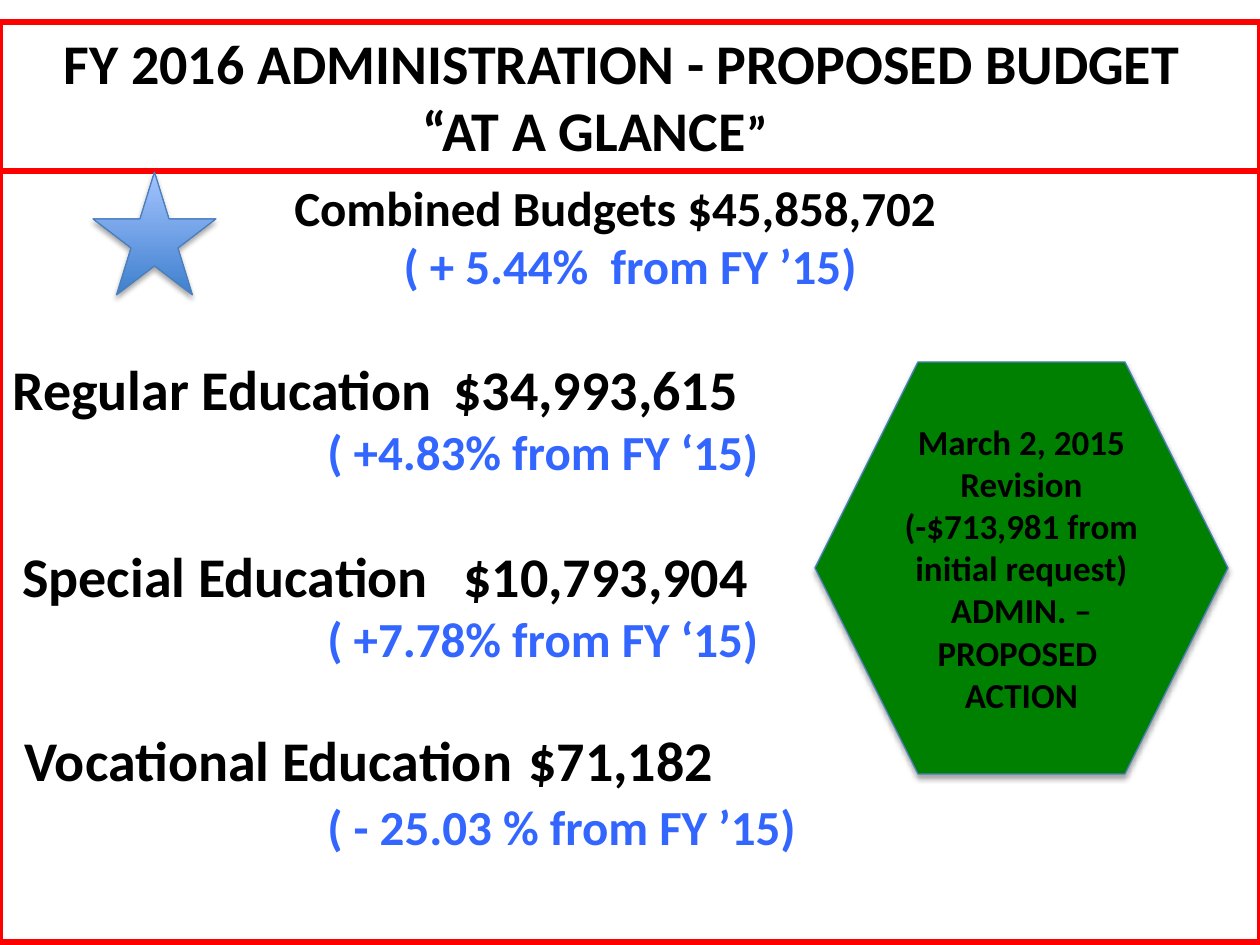
from lxml import etree
from pptx import Presentation
from pptx.dml.color import RGBColor
from pptx.enum.shapes import MSO_SHAPE
from pptx.enum.text import MSO_ANCHOR, PP_ALIGN
from pptx.oxml import parse_xml
from pptx.oxml.ns import qn
from pptx.util import Pt

PX = 914400 // 126
DRAWING_NS = "http://schemas.openxmlformats.org/drawingml/2006/main"
COLORS = {
    "text": "000000", "change": "3366FF", "frame": "FF0000", "revision": "008000",
    "edge": "4B7EBC", "star_dark": "3F80CE", "star_light": "A4C4FF",
}


def color(name):
    return RGBColor.from_string(COLORS[name])


def add_outlined(slide, preset, box, line, width):
    left, top, box_width, box_height = (length * PX for length in box)
    shape = slide.shapes.add_shape(preset, left, top, box_width, box_height)
    shape.shadow.inherit = False
    shape.fill.background()
    shape.line.color.rgb = color(line)
    shape.line.width = Pt(width)
    shape.text_frame.word_wrap = True
    shape.text_frame.vertical_anchor = MSO_ANCHOR.TOP
    return shape


def add_soft_shadow(shape):
    effects = shape._element.spPr.find(qn("a:effectLst"))
    effects.append(parse_xml(
        f'<a:outerShdw xmlns:a="{DRAWING_NS}" blurRad="{Pt(3.1)}" dist="{Pt(1.8)}" '
        'dir="5400000" rotWithShape="0"><a:srgbClr val="000000">'
        '<a:alpha val="35000"/></a:srgbClr></a:outerShdw>'))


def add_line(frame, runs, align=PP_ALIGN.CENTER, before=0, left=0, right=0, tab=None):
    """Add a paragraph of (text, size, colour) runs; left, right and tab are px."""
    is_first = not frame.paragraphs[0].runs
    paragraph = frame.paragraphs[0] if is_first else frame.add_paragraph()
    paragraph.alignment = align
    paragraph.space_before = Pt(before)
    properties = paragraph._p.get_or_add_pPr()
    properties.set("marL", str(left * PX))
    properties.set("marR", str(right * PX))
    properties.set("indent", "0")
    if tab:
        tabs = etree.SubElement(properties, qn("a:tabLst"))
        etree.SubElement(tabs, qn("a:tab"), pos=str(tab * PX), algn="l")
    for text, size, name in runs:
        run = paragraph.add_run()
        run.text = text
        run.font.name = "Calibri"
        run.font.size = Pt(size)
        run.font.bold = True
        run.font.color.rgb = color(name)


def add_budgets(slide, box):
    frame = add_outlined(slide, MSO_SHAPE.RECTANGLE, box, "frame", 3).text_frame
    add_line(frame, [("Combined Budgets $45,858,702", 28, "text")], right=30)
    add_line(frame, [("( + 5.44%  from FY ’15)", 28, "change")])
    # name, amount, change, left px, amount px, space before name and change
    programs = [
        ("Regular Education", "$34,993,615", "( +4.83% from FY ‘15)", 0, 492, 34, 0),
        ("Special Education", "$10,793,904", "( +7.78% from FY ‘15)", 10, 492, 35, 0),
        ("Vocational Education", "$71,182", "( - 25.03 % from FY ’15)", 12, 542, 33, 2),
    ]
    for name, amount, change, left, tab, before_name, before_change in programs:
        add_line(frame, [(f"{name}\t{amount}", 32, "text")], PP_ALIGN.LEFT,
                 before_name, left, tab=tab)
        add_line(frame, [(change, 28, "change")], PP_ALIGN.LEFT, before_change, left=315)


def add_title(slide, box):
    frame = add_outlined(slide, MSO_SHAPE.RECTANGLE, box, "frame", 3).text_frame
    add_line(frame, [("FY 2016 ADMINISTRATION - PROPOSED BUDGET", 32, "text")], right=16)
    add_line(frame, [("“AT A GLANCE", 32, "text"), ("”", 28, "text")], right=70)


def add_revision(slide, box):
    hexagon = add_outlined(slide, MSO_SHAPE.HEXAGON, box, "edge", 0.75)
    hexagon.fill.solid()
    hexagon.fill.fore_color.rgb = color("revision")
    add_soft_shadow(hexagon)
    hexagon.text_frame.vertical_anchor = MSO_ANCHOR.MIDDLE
    for text in ("March 2, 2015", "Revision", "(-$713,981 from initial request)",
                 "ADMIN. –PROPOSED ", "ACTION"):
        add_line(hexagon.text_frame, [(text, 20, "text")])


def add_star(slide, box):
    star = add_outlined(slide, MSO_SHAPE.STAR_5_POINT, box, "edge", 0.75)
    star.fill.gradient()
    star.fill.gradient_angle = 90
    for stop, name in zip(star.fill.gradient_stops, ("star_dark", "star_light")):
        stop.color.rgb = color(name)
    add_soft_shadow(star)


def main():
    deck = Presentation()
    deck.slide_width, deck.slide_height = 1260 * PX, 945 * PX
    slide = deck.slides.add_slide(deck.slide_layouts[6])
    add_budgets(slide, (0, 171, 1260, 771))
    add_title(slide, (0, 22, 1260, 149))
    add_revision(slide, (815, 362, 413, 412))
    add_star(slide, (93, 172, 123, 123))
    deck.save("out.pptx")


if __name__ == "__main__":
    main()
